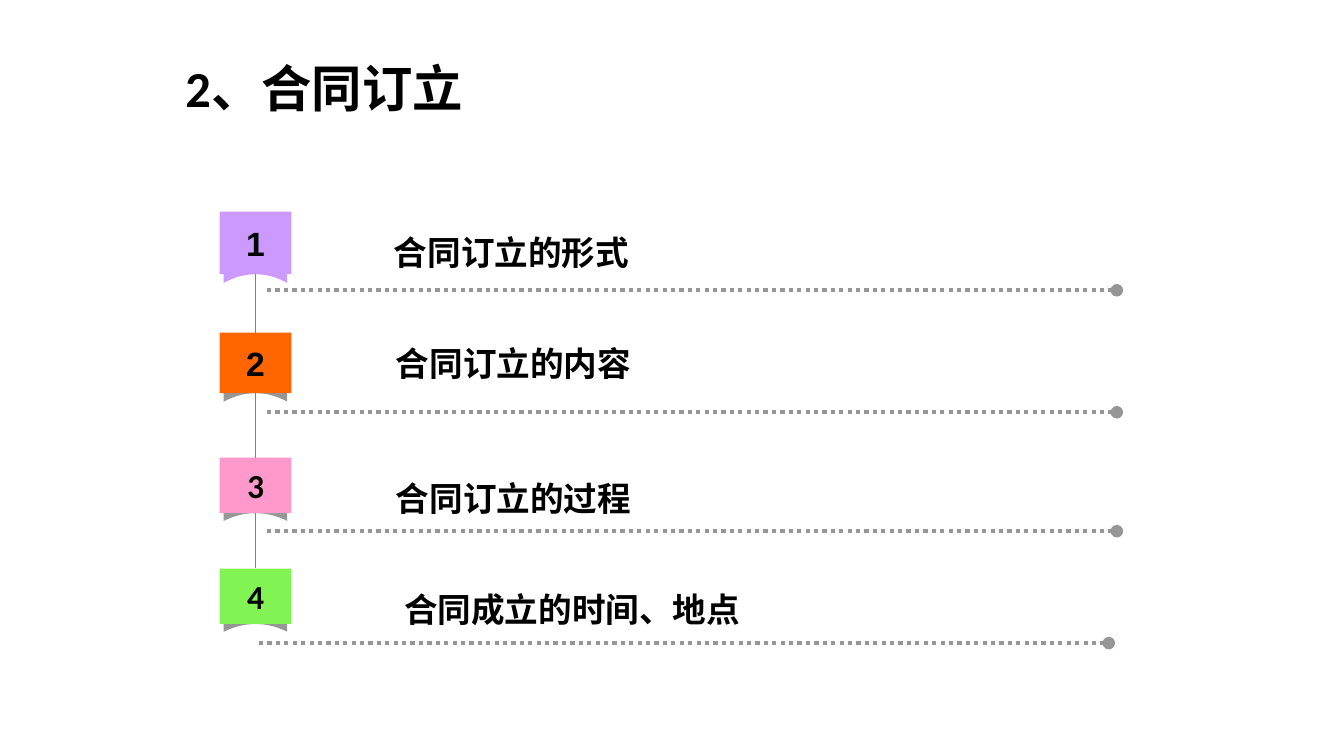
"""Build a contract formation agenda slide with four numbered ribbon tags."""
import dataclasses
import itertools

import lxml.etree
import pptx
import pptx.dml.color
import pptx.enum.dml
import pptx.enum.shapes
import pptx.enum.text
import pptx.oxml.ns
import pptx.shapes.autoshape
import pptx.shapes.connector
import pptx.slide
import pptx.text.text
import pptx.util

SLIDE_WIDTH = pptx.util.Inches(13.333)
SLIDE_HEIGHT = pptx.util.Inches(7.5)
COLUMN = SLIDE_WIDTH / 40
ROW = SLIDE_HEIGHT / 30

TAG_LEFT, TAG_WIDTH = 6.54, 2.13
FOLD_INSET = 0.12
FOLD_TOP, FOLD_SHOULDER, FOLD_DEPTH = 0.65, 0.77, 0.14
ARCH_STEPS = 20
RULE_LENGTH = 25.29
LABEL_HEIGHT = 2
BLACK, THREAD_GREY, RULE_GREY = "000000", "808080", "969696"

ALIGN = pptx.enum.text.PP_ALIGN
ANCHOR = pptx.enum.text.MSO_ANCHOR
AUTO_SIZE = pptx.enum.text.MSO_AUTO_SIZE
TITLE_FRAME = {"word_wrap": True, "auto_size": AUTO_SIZE.NONE, "vertical_anchor": ANCHOR.TOP}
TAG_FRAME = {"word_wrap": False, "vertical_anchor": ANCHOR.MIDDLE}
LABEL_FRAME = {"word_wrap": False, "auto_size": AUTO_SIZE.SHAPE_TO_FIT_TEXT}


@dataclasses.dataclass(frozen=True)
class AgendaItem:
    label: str
    tag_color: str
    fold_color: str
    number_font: str
    tag_top: float
    tag_height: float
    label_left: float
    label_top: float
    label_width: float
    rule_left: float
    rule_top: float


ITEMS = [
    AgendaItem("合同订立的形式", "CC99FF", "CC99FF", "Arial", 8.4, 2.48, 11.43, 9, 7.62, 7.95, 11.52),
    AgendaItem("合同订立的内容", "FF6600", RULE_GREY, "Arial", 13.2, 2.4, 11.49, 13.4, 7.62, 7.95, 16.36),
    AgendaItem("合同订立的过程", "FF99CC", RULE_GREY, "Calibri", 18.16, 2.2, 11.49, 18.76, 7.62, 7.95, 21.08),
    AgendaItem("合同成立的时间、地点", "81F353", RULE_GREY, "Calibri", 22.56, 2.2, 11.73, 23.16, 10.65, 7.71, 25.52),
]


def columns(count: float) -> int:
    """Return a width in grid columns as a length."""
    return round(count * COLUMN)


def rows(count: float) -> int:
    """Return a height in grid rows as a length."""
    return round(count * ROW)


def color(value: str) -> pptx.dml.color.RGBColor:
    """Return the colour of a hex string."""
    return pptx.dml.color.RGBColor.from_string(value)


def set_format(target: object, values: dict) -> None:
    """Set every format value on the target."""
    for name, value in values.items():
        setattr(target, name, value)


def write_text(frame: pptx.text.text.TextFrame, text: str, size: float, font: str,
               alignment: ALIGN, frame_format: dict) -> None:
    """Write one bold black paragraph into a text frame."""
    set_format(frame, frame_format)
    paragraph = frame.paragraphs[0]
    paragraph.alignment = alignment
    run = paragraph.add_run()
    run.text = text
    set_format(run.font, {"size": pptx.util.Pt(size), "name": font, "bold": True})
    run.font.color.rgb = color(BLACK)


def paint(shape: pptx.shapes.autoshape.Shape, fill_color: str) -> None:
    """Give a shape a plain fill without outline or shadow."""
    shape.fill.solid()
    shape.fill.fore_color.rgb = color(fill_color)
    shape.line.fill.background()
    shape.shadow.inherit = False


def draw_fold(slide: pptx.slide.Slide, item: AgendaItem) -> None:
    """Draw the ribbon fold with an arched lower edge behind a tag."""
    left = TAG_LEFT + FOLD_INSET
    width = TAG_WIDTH - 2 * FOLD_INSET

    def point(across: float, down: float) -> tuple[int, int]:
        """Place a point given as shares of fold width and tag height."""
        return columns(left + across * width), rows(item.tag_top + down * item.tag_height)

    shares = [step / ARCH_STEPS for step in range(ARCH_STEPS, -1, -1)]
    arch = [point(share, 1 + FOLD_DEPTH * (2 * share - 1) ** 2) for share in shares]
    roof = [point(0, FOLD_SHOULDER), point(0.5, FOLD_TOP), point(1, FOLD_SHOULDER)]
    builder = slide.shapes.build_freeform(*arch[0])
    builder.add_line_segments(arch[1:] + roof, close=True)
    paint(builder.convert_to_shape(), item.fold_color)


def draw_tag(slide: pptx.slide.Slide, item: AgendaItem, number: int) -> pptx.shapes.autoshape.Shape:
    """Draw a numbered tag and return it."""
    tag = slide.shapes.add_shape(
        pptx.enum.shapes.MSO_SHAPE.RECTANGLE, columns(TAG_LEFT), rows(item.tag_top),
        columns(TAG_WIDTH), rows(item.tag_height))
    paint(tag, item.tag_color)
    write_text(tag.text_frame, str(number), 24, item.number_font, ALIGN.CENTER, TAG_FRAME)
    return tag


def draw_line(slide: pptx.slide.Slide, left: float, top: float, length: float,
              line_color: str, weight: float) -> pptx.shapes.connector.Connector:
    """Draw a level line without shadow and return it."""
    line = slide.shapes.add_connector(
        pptx.enum.shapes.MSO_CONNECTOR.STRAIGHT, columns(left), rows(top),
        columns(left + length), rows(top))
    line.line.color.rgb = color(line_color)
    line.line.width = pptx.util.Pt(weight)
    lxml.etree.SubElement(line._element.spPr, pptx.oxml.ns.qn("a:effectLst"))
    return line


def draw_rule(slide: pptx.slide.Slide, item: AgendaItem) -> None:
    """Draw the dotted rule of an item with a round end."""
    rule = draw_line(slide, item.rule_left, item.rule_top, RULE_LENGTH, RULE_GREY, 3)
    rule.line.dash_style = pptx.enum.dml.MSO_LINE.ROUND_DOT
    outline = rule.line._get_or_add_ln()
    lxml.etree.SubElement(outline, pptx.oxml.ns.qn("a:tailEnd"), type="oval")


def draw_label(slide: pptx.slide.Slide, item: AgendaItem) -> None:
    """Write the label of an item."""
    box = slide.shapes.add_textbox(
        columns(item.label_left), rows(item.label_top),
        columns(item.label_width), rows(LABEL_HEIGHT))
    write_text(box.text_frame, item.label, 24, "Arial", ALIGN.LEFT, LABEL_FRAME)


def draw_thread(slide: pptx.slide.Slide, upper: pptx.shapes.autoshape.Shape,
                lower: pptx.shapes.autoshape.Shape) -> None:
    """Join the bottom of one tag to the top of the next."""
    thread = draw_line(slide, TAG_LEFT, 0, 0, THREAD_GREY, 0.75)
    thread.begin_connect(upper, 2)
    thread.end_connect(lower, 0)


def main() -> None:
    """Build and save the presentation."""
    presentation = pptx.Presentation()
    set_format(presentation, {"slide_width": SLIDE_WIDTH, "slide_height": SLIDE_HEIGHT})
    slide = presentation.slides.add_slide(presentation.slide_layouts.get_by_name("Title Only"))
    title = slide.shapes.title
    set_format(title, {"left": columns(5.22), "top": rows(2.08),
                       "width": columns(15.15), "height": rows(2.84)})
    write_text(title.text_frame, "2、合同订立", 36, "Calibri", ALIGN.LEFT, TITLE_FRAME)

    tags = []
    for number, item in enumerate(ITEMS, start=1):
        draw_fold(slide, item)
        tags.append(draw_tag(slide, item, number))
        draw_rule(slide, item)
        draw_label(slide, item)
    for upper, lower in itertools.pairwise(tags):
        draw_thread(slide, upper, lower)
    presentation.save("out.pptx")


if __name__ == "__main__":
    main()
